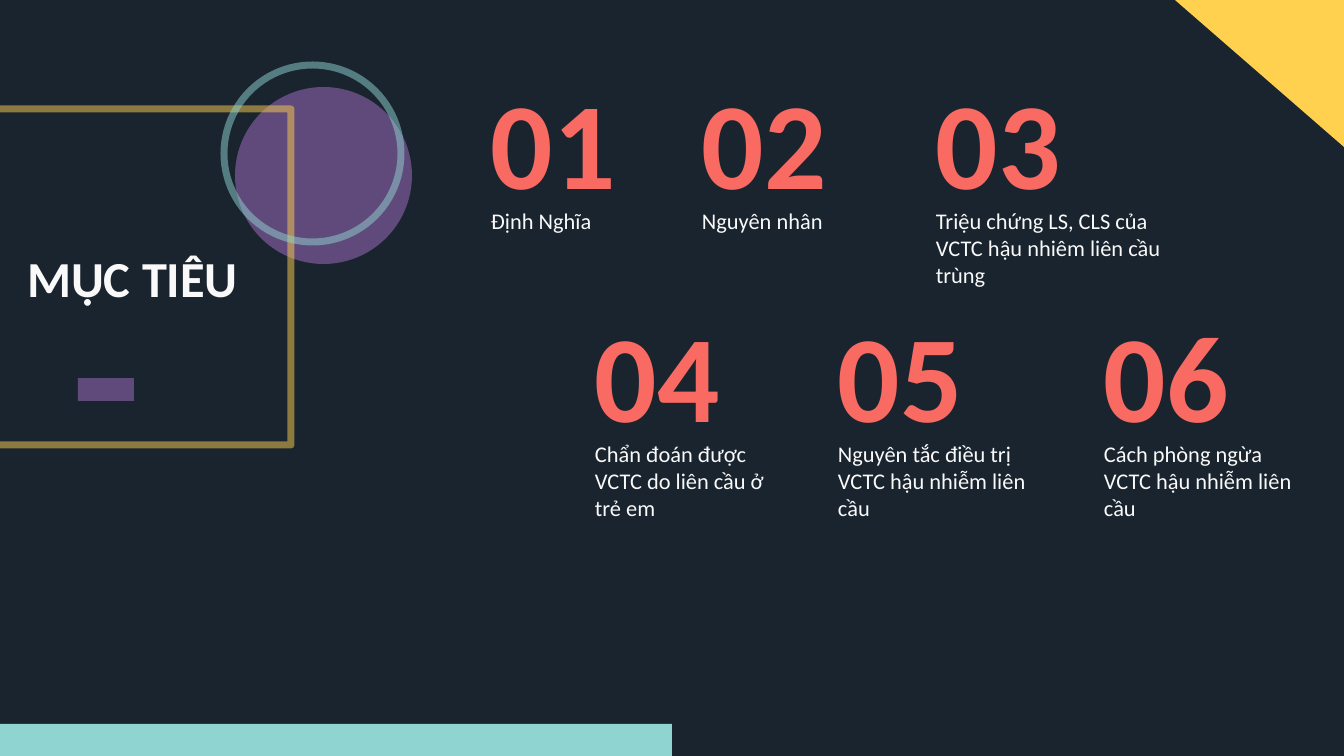
import pptx
import pptx.dml.color
import pptx.enum.shapes
import pptx.enum.text
import pptx.oxml
import pptx.oxml.ns
import pptx.util

RGBColor = pptx.dml.color.RGBColor
SHAPE = pptx.enum.shapes.MSO_SHAPE
ANCHOR = pptx.enum.text.MSO_ANCHOR
AUTO_SIZE = pptx.enum.text.MSO_AUTO_SIZE
ALIGN = pptx.enum.text.PP_ALIGN

NIGHT = RGBColor(0x1A, 0x24, 0x2E)
PURPLE = RGBColor(0x60, 0x4A, 0x7B)
YELLOW = RGBColor(0xFF, 0xD1, 0x4F)
TEAL = RGBColor(0x90, 0xD4, 0xD2)
CORAL = RGBColor(0xF9, 0x6A, 0x62)
WHITE = RGBColor(0xF9, 0xF9, 0xF9)

FONT = "Calibri"
EMU_PER_PX = 914400 / 50.4
WIDTH, HEIGHT = 1344, 756

TITLE = "MỤC TIÊU"
# Each row: top, then goals as (left, caption width, caption height, caption)
ROWS = [
    (61, [
        (486, 146, 37, "Định Nghĩa"),
        (697, 160, 37, "Nguyên nhân"),
        (931, 242, 119, "Triệu chứng LS, CLS của VCTC hậu nhiêm liên cầu trùng"),
    ]),
    (294, [
        (590, 200, 92, "Chẩn đoán được VCTC do liên cầu ở trẻ em"),
        (833, 200, 119, "Nguyên tắc điều trị VCTC hậu nhiễm liên cầu"),
        (1099, 200, 92, "Cách phòng ngừa VCTC hậu nhiễm liên cầu"),
    ]),
]
NUMBER_WIDTH, NUMBER_HEIGHT = 164, 159
CAPTION_DROP = 141

# (preset, left, top, width, height, fill, outline)
DECORATIONS = [
    (SHAPE.OVAL, 235, 87, 177, 177, PURPLE, None),
    (SHAPE.RECTANGLE, 78, 378, 56, 23, PURPLE, None),
    (SHAPE.RECTANGLE, -11, 109, 302, 336, None, YELLOW),
    (SHAPE.OVAL, 224, 65, 177, 177, None, TEAL),
    (SHAPE.RECTANGLE, 0, 724, 672, 32, TEAL, None),
]
CORNER = [(1175, 0), (WIDTH, 0), (WIDTH, 147)]


def px(*lengths):
    return [pptx.util.Emu(round(length * EMU_PER_PX)) for length in lengths]


def paint(shape, fill=None, outline=None):
    """Set a solid fill, or a half-transparent outline, without shadow."""
    shape.shadow.inherit = False
    if fill is None:
        shape.fill.background()
    else:
        shape.fill.solid()
        shape.fill.fore_color.rgb = fill
    if outline is None:
        shape.line.fill.background()
    else:
        shape.line.color.rgb = outline
        shape.line.width = pptx.util.Pt(10)
        color = shape.line._get_or_add_ln().find(".//" + pptx.oxml.ns.qn("a:srgbClr"))
        color.append(pptx.oxml.parse_xml(
            f'<a:alpha {pptx.oxml.ns.nsdecls("a")} val="50000"/>'))


def write(box, text, size, color, bold=False, anchor=ANCHOR.TOP, fit=AUTO_SIZE.NONE):
    frame = box.text_frame
    frame.word_wrap = True
    frame.auto_size = fit
    frame.vertical_anchor = anchor
    frame.margin_left = frame.margin_right = pptx.util.Inches(0.1)
    frame.margin_top = frame.margin_bottom = pptx.util.Inches(0.1)
    para = frame.paragraphs[0]
    para.alignment = ALIGN.LEFT
    para.line_spacing = 1.0
    span = para.add_run()
    span.text = text
    span.font.name = FONT
    span.font.size = pptx.util.Pt(size)
    span.font.bold = bold
    span.font.color.rgb = color


def main():
    deck = pptx.Presentation()
    deck.slide_width, deck.slide_height = px(WIDTH, HEIGHT)
    page = deck.slides.add_slide(deck.slide_layouts[5])
    page.background.fill.solid()
    page.background.fill.fore_color.rgb = NIGHT

    for preset, left, top, width, height, fill, outline in DECORATIONS:
        shape = page.shapes.add_shape(preset, *px(left, top, width, height))
        paint(shape, fill, outline)

    builder = page.shapes.build_freeform(*CORNER[0], scale=EMU_PER_PX)
    builder.add_line_segments(CORNER[1:], close=True)
    paint(builder.convert_to_shape(), fill=YELLOW)

    title = page.shapes.title
    title.left, title.top, title.width, title.height = px(22, 177, 269, 201)
    write(title, TITLE, 72, WHITE, bold=True, anchor=ANCHOR.MIDDLE)
    title.element.getparent().append(title.element)  # in front of the decorations

    number = 0
    for top, goals in ROWS:
        for left, width, height, caption in goals:
            number += 1
            box = page.shapes.add_textbox(*px(left, top, NUMBER_WIDTH, NUMBER_HEIGHT))
            write(box, f"{number:02}", 176, CORAL, bold=True, fit=AUTO_SIZE.SHAPE_TO_FIT_TEXT)
            box = page.shapes.add_textbox(*px(left, top + CAPTION_DROP, width, height))
            write(box, caption, 32, WHITE, fit=AUTO_SIZE.SHAPE_TO_FIT_TEXT)

    deck.save("out.pptx")


if __name__ == "__main__":
    main()
